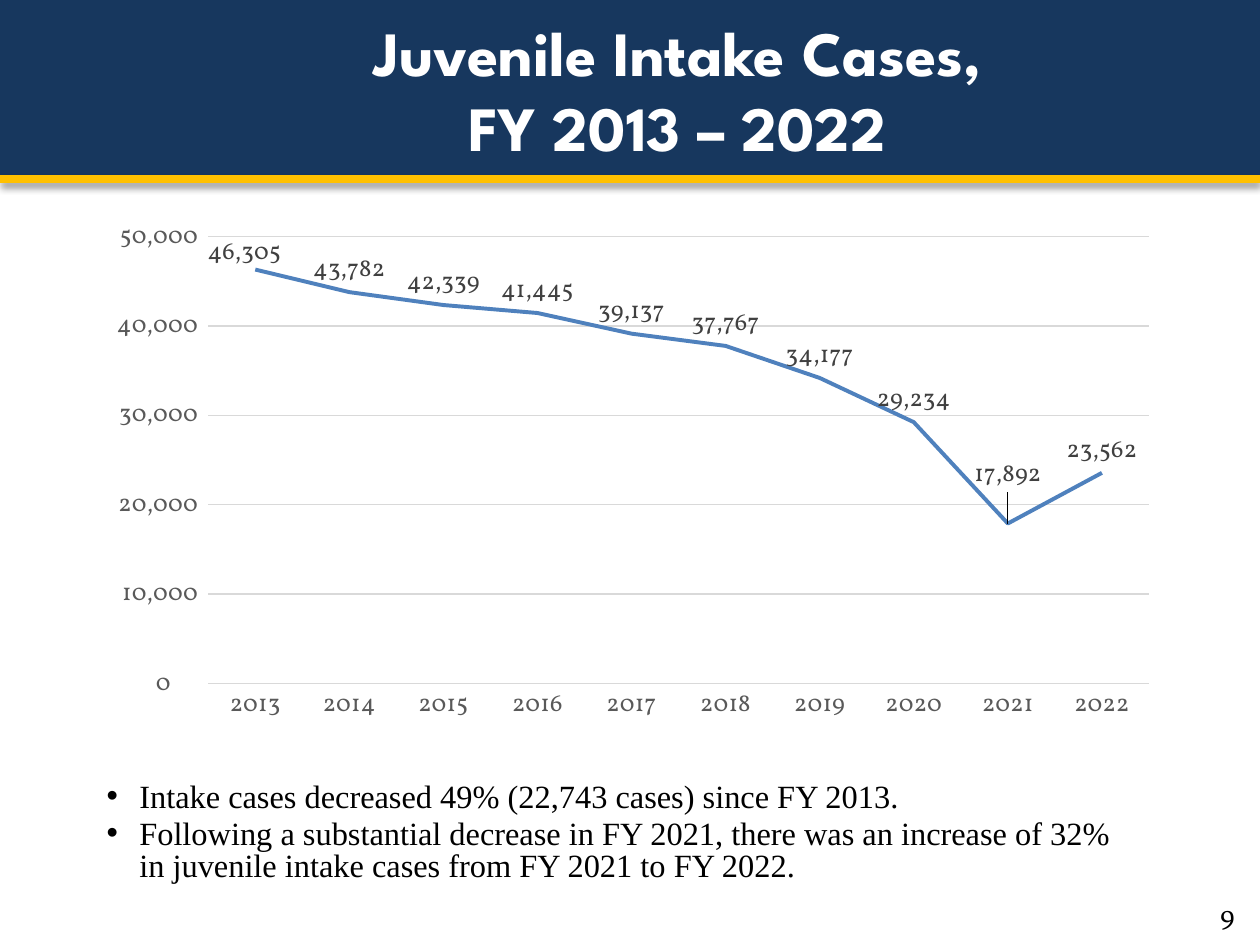
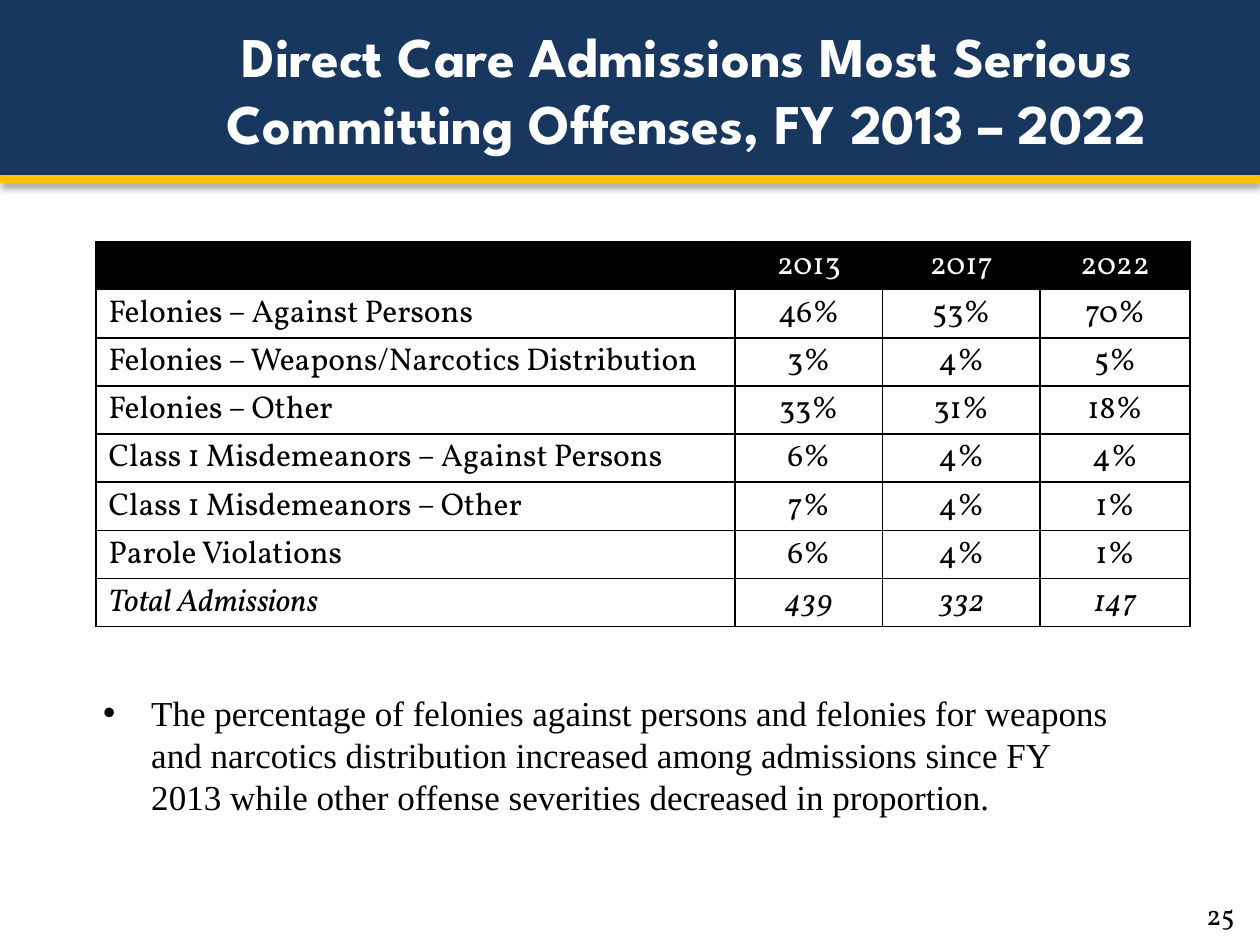
from dataclasses import dataclass
from typing import Any

import pptx
import pptx.chart.data
import pptx.dml.color
import pptx.enum.chart
import pptx.enum.shapes
import pptx.enum.text
import pptx.oxml
import pptx.oxml.ns
import pptx.util

Cm = pptx.util.Cm
Pt = pptx.util.Pt
RGBColor = pptx.dml.color.RGBColor
Align = pptx.enum.text.PP_ALIGN
Anchor = pptx.enum.text.MSO_ANCHOR

NAVY = RGBColor(0x17, 0x37, 0x5E)
GOLD = RGBColor(0xFF, 0xC0, 0x00)
WHITE = RGBColor(0xFF, 0xFF, 0xFF)
BLACK = RGBColor(0, 0, 0)
BLUE = RGBColor(0x4F, 0x81, 0xBD)
GRID_GRAY = RGBColor(0xD9, 0xD9, 0xD9)
AXIS_GRAY = RGBColor(0x59, 0x59, 0x59)
LABEL_GRAY = RGBColor(0x40, 0x40, 0x40)

TITLE_FONT = "League Spartan"
BODY_FONT = "Times New Roman"
FIGURE_FONT = "Vollkorn"

SLIDE_W, SLIDE_H = Cm(25.4), Cm(19.05)
BAND_H = Cm(3.6)
NS = pptx.oxml.ns.nsdecls("a", "c")


@dataclass(frozen=True)
class Box:
    left: float
    top: float
    width: float
    height: float

    def lengths(self) -> tuple[pptx.util.Length, ...]:
        return Cm(self.left), Cm(self.top), Cm(self.width), Cm(self.height)


@dataclass(frozen=True)
class Header:
    title: str
    size: float
    width: float
    number: str


@dataclass(frozen=True)
class Bullets:
    box: Box
    items: tuple[str, ...]
    size: float
    indent: float
    spacing: float


INTAKE_HEADER = Header("Juvenile Intake Cases,\vFY 2013 – 2022", 36, 20.12, "9")
INTAKE_BULLETS = Bullets(
    Box(1.9, 15.67, 21.16, 2.51),
    (
        "Intake cases decreased 49% (22,743 cases) since FY 2013.",
        "Following a substantial decrease in FY 2021, there was an increase of 32% "
        "in juvenile intake cases from FY 2021 to FY 2022.",
    ),
    18.5, 0.66, 0.8,
)
INTAKE_CASES = (46305, 43782, 42339, 41445, 39137, 37767, 34177, 29234, 17892, 23562)
LABEL_SHIFTS = {0: (-0.01, 0.01), 8: (0, -0.05)}

OFFENSES_HEADER = Header(
    "Direct Care Admissions Most Serious Committing Offenses, FY 2013 – 2022",
    32, 20.52, "25",
)
OFFENSES_BULLETS = Bullets(
    Box(1.83, 13.82, 21.16, 2.95),
    (
        "The percentage of felonies against persons and felonies for weapons and "
        "narcotics distribution increased among admissions since FY 2013 while "
        "other offense severities decreased in proportion.",
    ),
    20, 0.97, 1.0,
)
OFFENSE_COLUMNS = (12.88, 2.97, 3.18, 3.02)
OFFENSE_ROWS = (
    ("", "2013", "2017", "2022"),
    ("Felonies – Against Persons", "46%", "53%", "70%"),
    ("Felonies – Weapons/Narcotics Distribution", "3%", "4%", "5%"),
    ("Felonies – Other", "33%", "31%", "18%"),
    ("Class 1 Misdemeanors – Against Persons", "6%", "4%", "4%"),
    ("Class 1 Misdemeanors – Other", "7%", "4%", "1%"),
    ("Parole Violations", "6%", "4%", "1%"),
    ("Total Admissions", "439", "332", "147"),
)


def assign(target: Any, values: dict[str, Any]) -> None:
    for name, value in values.items():
        setattr(target, name, value)


def set_font(font: Any, name: str, size: float, color: RGBColor, **extra: bool) -> None:
    assign(font, {"name": name, "size": Pt(size), **extra})
    font.color.rgb = color


def set_line(line: Any, color: RGBColor, width: float) -> None:
    line.color.rgb = color
    line.width = Pt(width)


def add_xml(parent: Any, xml: str, index: int | None = None) -> None:
    tag, rest = xml[1:].split(">", 1)
    name, _, attributes = tag.partition(" ")
    element = pptx.oxml.parse_xml(f"<{name} {NS} {attributes}>{rest}")
    parent.insert(len(parent) if index is None else index, element)


def manual_layout(**values: float | str) -> str:
    parts = "".join(f'<c:{name} val="{value}"/>' for name, value in values.items())
    return f"<c:layout><c:manualLayout>{parts}</c:manualLayout></c:layout>"


def add_header(s: Any, header: Header) -> None:
    band = s.shapes.add_shape(pptx.enum.shapes.MSO_SHAPE.RECTANGLE, 0, 0, SLIDE_W, BAND_H)
    band.shadow.inherit = False
    band.fill.solid()
    band.fill.fore_color.rgb = NAVY
    band.line.fill.background()

    rule = s.shapes.add_connector(
        pptx.enum.shapes.MSO_CONNECTOR.STRAIGHT, 0, BAND_H, SLIDE_W, BAND_H
    )
    set_line(rule.line, GOLD, 4.5)
    add_xml(
        rule.element.spPr,
        f'<a:effectLst><a:outerShdw blurRad="{Pt(4)}" dist="{Pt(3)}" dir="5400000" '
        'rotWithShape="0"><a:srgbClr val="000000"><a:alpha val="40000"/></a:srgbClr>'
        "</a:outerShdw></a:effectLst>",
    )

    title = s.shapes.title
    s.shapes.element.append(title.element)
    left, top, width, height = Box(3.6, 0.2, header.width, 3.18).lengths()
    assign(title, {"left": left, "top": top, "width": width, "height": height})
    tf = title.text_frame
    tf.text = header.title
    assign(tf, {
        "word_wrap": True,
        "vertical_anchor": Anchor.MIDDLE,
        "auto_size": pptx.enum.text.MSO_AUTO_SIZE.NONE,
    })
    p = tf.paragraphs[0]
    p.alignment = Align.CENTER
    set_font(p.font, TITLE_FONT, header.size, WHITE, bold=True)

    tf = s.shapes.add_textbox(*Box(23.67, 17.9, 1.47, 1.07).lengths()).text_frame
    assign(tf, {"word_wrap": True, "vertical_anchor": Anchor.MIDDLE})
    p = tf.paragraphs[0]
    p.text = header.number
    p.alignment = Align.RIGHT
    set_font(p.font, FIGURE_FONT, 16, BLACK)


def add_bullets(s: Any, bullets: Bullets) -> None:
    tf = s.shapes.add_textbox(*bullets.box.lengths()).text_frame
    tf.word_wrap = True
    indent = Cm(bullets.indent)
    for i, item in enumerate(bullets.items):
        p = tf.add_paragraph() if i else tf.paragraphs[0]
        p.text = item
        p.line_spacing = bullets.spacing
        p.space_before = Pt(0.2 * bullets.size if i else 0)
        p_pr = p._p.get_or_add_pPr()
        p_pr.set("marL", str(indent))
        p_pr.set("indent", str(-indent))
        add_xml(p_pr, '<a:buFont typeface="Arial"></a:buFont>')
        add_xml(p_pr, '<a:buChar char="•"></a:buChar>')
        set_font(p.font, BODY_FONT, bullets.size, BLACK)


def add_intake_chart(s: Any) -> None:
    data = pptx.chart.data.CategoryChartData(number_format="#,##0")
    data.categories = [str(year) for year in range(2013, 2023)]
    data.add_series("Series 1", INTAKE_CASES)
    chart = s.shapes.add_chart(
        pptx.enum.chart.XL_CHART_TYPE.LINE, *Box(1.8, 4.24, 21.8, 10.6).lengths(), data
    ).chart
    assign(chart, {"has_legend": False, "has_title": False})
    set_font(chart.font, FIGURE_FONT, 14, BLACK)

    plot_area = chart.plots[0]._element.getparent()
    for layout in plot_area.xpath("./c:layout"):
        plot_area.remove(layout)
    add_xml(plot_area, manual_layout(
        layoutTarget="inner", xMode="edge", yMode="edge", x=0.11, y=0.05, w=0.87, h=0.85
    ), 0)

    for axis in (chart.category_axis, chart.value_axis):
        axis.major_tick_mark = axis.minor_tick_mark = pptx.enum.chart.XL_TICK_MARK.NONE
        set_font(axis.tick_labels.font, FIGURE_FONT, 14, AXIS_GRAY)
    set_line(chart.category_axis.format.line, GRID_GRAY, 0.75)
    axis = chart.value_axis
    assign(axis, {"minimum_scale": 0, "maximum_scale": 50000, "major_unit": 10000})
    axis.format.line.fill.background()
    set_line(axis.major_gridlines.format.line, GRID_GRAY, 0.75)
    assign(axis.tick_labels, {
        "number_format": r'_(* #,##0_);_(* \(#,##0\);_(* "0"??_);_(@_)',
        "number_format_is_linked": False,
    })

    chart.plots[0].vary_by_categories = False
    series = chart.plots[0].series[0]
    series.smooth = False
    series.marker.style = pptx.enum.chart.XL_MARKER_STYLE.NONE
    set_line(series.format.line, BLUE, 2.25)
    above = pptx.enum.chart.XL_LABEL_POSITION.ABOVE
    assign(series.data_labels, {
        "show_value": True,
        "position": above,
        "number_format": "#,##0",
        "number_format_is_linked": False,
    })
    set_font(series.data_labels.font, FIGURE_FONT, 14, LABEL_GRAY)
    for i, (x, y) in LABEL_SHIFTS.items():
        label = series.points[i].data_label
        set_font(label.font, FIGURE_FONT, 14, LABEL_GRAY)
        label.position = above
        d_lbl = series._element.xpath(f".//c:dLbl[c:idx/@val='{i}']")[0]
        add_xml(d_lbl, manual_layout(x=x, y=y), 1)


def add_borders(cell: Any) -> None:
    for side in "LRTB":
        add_xml(
            cell._tc.get_or_add_tcPr(),
            f'<a:ln{side} w="{Pt(1)}"><a:solidFill><a:srgbClr val="{BLACK}"/>'
            f"</a:solidFill></a:ln{side}>",
        )


def add_offense_table(s: Any) -> None:
    box = Box(1.94, 4.87, sum(OFFENSE_COLUMNS), 7.76)
    table = s.shapes.add_table(
        len(OFFENSE_ROWS), len(OFFENSE_COLUMNS), *box.lengths()
    ).table
    table.horz_banding = False
    for column, width in zip(table.columns, OFFENSE_COLUMNS):
        column.width = Cm(width)
    for i, row in enumerate(OFFENSE_ROWS):
        for j, text in enumerate(row):
            cell = table.cell(i, j)
            assign(cell, {
                "text": text,
                "vertical_anchor": Anchor.MIDDLE,
                "margin_left": Cm(0.03 if j else 0.25),
                "margin_right": Cm(0.03),
                "margin_top": Cm(0.03),
                "margin_bottom": 0,
            })
            add_borders(cell)
            if i == 0:
                cell.fill.solid()
                cell.fill.fore_color.rgb = BLACK
            else:
                cell.fill.background()
            p = cell.text_frame.paragraphs[0]
            p.alignment = Align.CENTER if j else Align.LEFT
            set_font(p.font, FIGURE_FONT, 18, BLACK if i else WHITE,
                     bold=False, italic=i == len(OFFENSE_ROWS) - 1)


def main() -> None:
    prs = pptx.Presentation()
    assign(prs, {"slide_width": SLIDE_W, "slide_height": SLIDE_H})
    for header, bullets, add_figure in (
        (INTAKE_HEADER, INTAKE_BULLETS, add_intake_chart),
        (OFFENSES_HEADER, OFFENSES_BULLETS, add_offense_table),
    ):
        s = prs.slides.add_slide(prs.slide_layouts[5])
        add_header(s, header)
        add_bullets(s, bullets)
        add_figure(s)
    prs.save("out.pptx")


if __name__ == "__main__":
    main()
